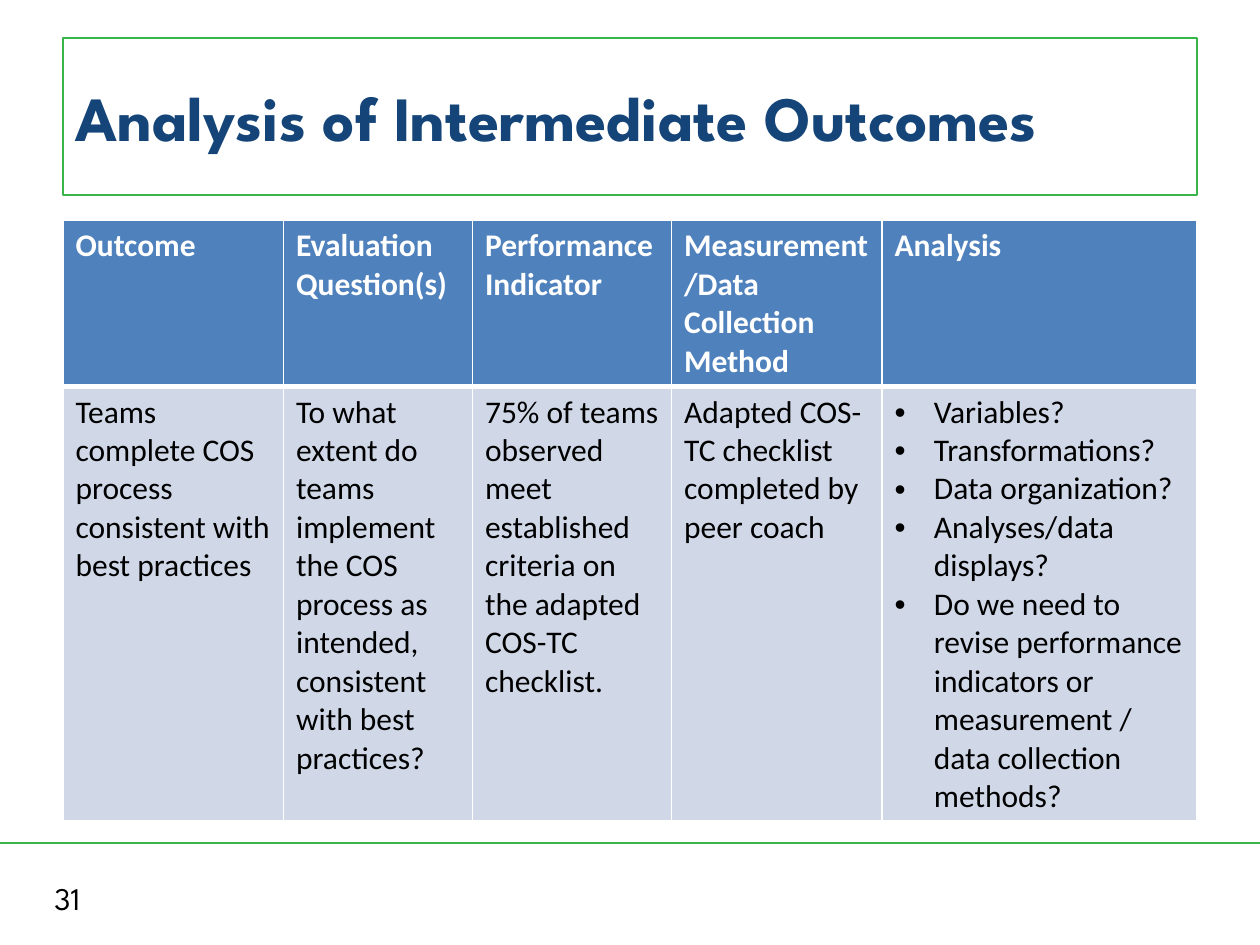
from lxml import etree
from pptx import Presentation
from pptx.dml.color import RGBColor
from pptx.enum import shapes, text
from pptx.oxml import ns
from pptx.util import Pt

COLORS = {
    "green": "39B54A",
    "navy": "154578",
    "header": "4F81BD",
    "body": "D0D8E8",
    "white": "FFFFFF",
    "black": "000000",
}
HEADING_FONT = "League Spartan"
TABLE_FONT = "Calibri"
COLUMN_WIDTHS = [126, 108, 113.76, 120.24, 180]
ROW_HEIGHTS = [95, 248]
HEADERS = [
    "Outcome",
    "Evaluation Question(s)",
    "Performance Indicator",
    "Measurement/Data Collection Method",
    "Analysis",
]
DETAILS = [
    "Teams complete COS process consistent with best practices",
    "To what extent do teams implement the COS process as intended, "
    "consistent with best practices?",
    "75% of teams observed meet established criteria on the adapted COS-TC checklist.",
    "Adapted COS-TC checklist completed by peer coach",
    [
        "Variables?",
        "Transformations?",
        "Data organization?",
        "Analyses/data displays?",
        "Do we need to revise performance indicators or measurement / "
        "data collection methods?",
    ],
]


def rgb(name):
    return RGBColor.from_string(COLORS[name])


def style_font(paragraph, name, size, color, bold=False):
    font = paragraph.font
    font.name = name
    font.size = Pt(size)
    font.bold = bold
    font.color.rgb = rgb(color)


def add_bullet(paragraph):
    properties = paragraph._p.get_or_add_pPr()
    properties.set("marL", str(Pt(22.5)))
    properties.set("indent", str(Pt(-22.5)))
    etree.SubElement(properties, ns.qn("a:buFont"), typeface="Arial")
    etree.SubElement(properties, ns.qn("a:buChar"), char="•")


def add_title(slide, wording):
    title = slide.shapes.title
    title.left, title.top, title.width, title.height = Pt(36), Pt(21.6), Pt(648), Pt(90)
    title.line.color.rgb = rgb("green")
    title.line.width = Pt(1)
    frame = title.text_frame
    frame.text = wording
    frame.auto_size = text.MSO_AUTO_SIZE.NONE
    frame.vertical_anchor = text.MSO_ANCHOR.MIDDLE
    paragraph = frame.paragraphs[0]
    paragraph.alignment = text.PP_ALIGN.LEFT
    style_font(paragraph, HEADING_FONT, 36, "navy", bold=True)


def add_footer_rule(slide):
    rule = slide.shapes.add_connector(
        shapes.MSO_CONNECTOR.STRAIGHT, Pt(0), Pt(481.7), Pt(720), Pt(481.7)
    )
    rule.line.color.rgb = rgb("green")
    rule.line.width = Pt(1.5)
    etree.SubElement(rule._element.spPr, ns.qn("a:effectLst"))


def add_page_number(slide, number):
    box = slide.shapes.add_textbox(Pt(24), Pt(498.5), Pt(168), Pt(29))
    frame = box.text_frame
    frame.word_wrap = True
    frame.text = number
    style_font(frame.paragraphs[0], HEADING_FONT, 18, "black")


def set_borders(cell, widths):
    properties = cell._tc.get_or_add_tcPr()
    for side, width in widths.items():
        line = etree.SubElement(properties, ns.qn(f"a:ln{side}"), w=str(Pt(width)))
        fill = etree.SubElement(line, ns.qn("a:solidFill"))
        etree.SubElement(fill, ns.qn("a:srgbClr"), val=COLORS["white"])


def fill_cell(cell, content, is_header):
    set_borders(cell, {"L": 1, "R": 1, "T": 1 if is_header else 3, "B": 3 if is_header else 1})
    cell.fill.solid()
    cell.fill.fore_color.rgb = rgb("header" if is_header else "body")
    has_bullets = isinstance(content, list)
    cell.text = "\n".join(content) if has_bullets else content
    for paragraph in cell.text_frame.paragraphs:
        if has_bullets:
            add_bullet(paragraph)
        style_font(paragraph, TABLE_FONT, 18, "white" if is_header else "black", is_header)


def add_outcome_table(slide):
    rows = [HEADERS, DETAILS]
    table = slide.shapes.add_table(
        len(rows), len(HEADERS), Pt(36), Pt(126), Pt(sum(COLUMN_WIDTHS)), Pt(sum(ROW_HEIGHTS))
    ).table
    for column, width in zip(table.columns, COLUMN_WIDTHS):
        column.width = Pt(width)
    for row_index, contents in enumerate(rows):
        table.rows[row_index].height = Pt(ROW_HEIGHTS[row_index])
        for column_index, content in enumerate(contents):
            fill_cell(table.cell(row_index, column_index), content, row_index == 0)


def main():
    presentation = Presentation()
    presentation.slide_width = Pt(720)
    presentation.slide_height = Pt(540)
    slide = presentation.slides.add_slide(presentation.slide_layouts[5])
    add_footer_rule(slide)
    add_page_number(slide, "31")
    add_title(slide, "Analysis of Intermediate Outcomes")
    add_outcome_table(slide)
    presentation.save("out.pptx")


if __name__ == "__main__":
    main()
